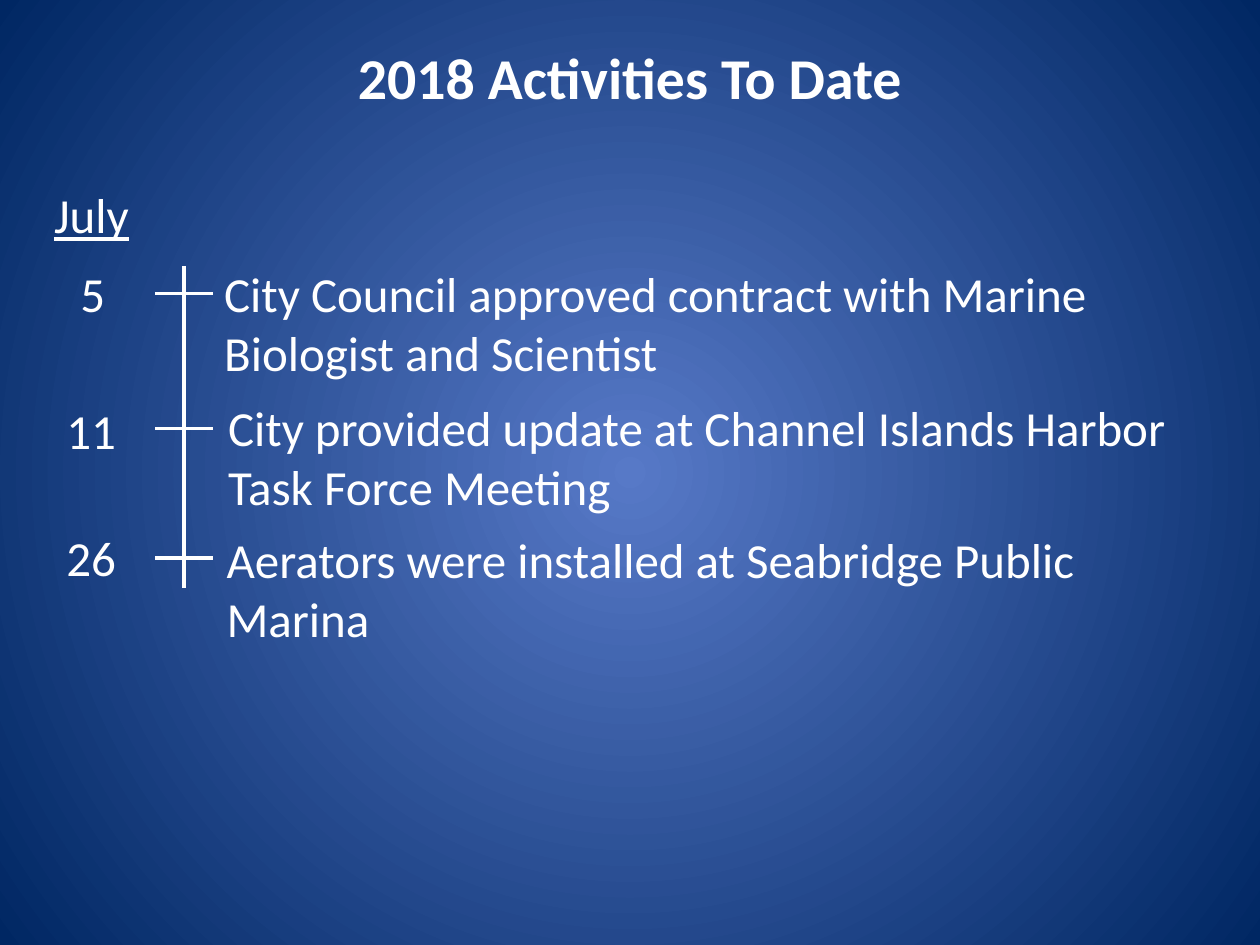
from lxml.etree import SubElement
from pptx import Presentation
from pptx.dml.color import RGBColor
from pptx.enum.shapes import MSO_CONNECTOR
from pptx.enum.text import MSO_ANCHOR, PP_ALIGN
from pptx.oxml import parse_xml
from pptx.oxml.ns import nsdecls, qn
from pptx.util import Cm, Pt


def style(p, size, bold=False, underline=False):
    p.font.name = "Calibri"
    p.font.size = Pt(size)
    p.font.bold = bold
    p.font.underline = underline
    p.font.color.rgb = RGBColor.from_string("FFFFFF")


def add_text(text, x, y, w, h, inset=0.1, underline=False):
    tf = s.shapes.add_textbox(Cm(x), Cm(y), Cm(w), Cm(h)).text_frame
    tf.word_wrap = True
    tf.margin_left = tf.margin_right = tf.margin_top = tf.margin_bottom = Cm(inset)
    p = tf.paragraphs[0]
    p.text = text
    style(p, 28, underline=underline)


prs = Presentation()
prs.slide_width, prs.slide_height = Cm(25.4), Cm(19.05)
s = prs.slides.add_slide(prs.slide_layouts[5])

fill = s.background.fill
fill.gradient()
for stop, color in zip(fill.gradient_stops, ("5779C7", "002763")):
    stop.color.rgb = RGBColor.from_string(color)
fill.gradient_stops[0].position = 0
fill.gradient_stops[1].position = 1
lin = s.element.find(".//" + qn("a:lin"))
lin.getparent().replace(lin, parse_xml(
    f'<a:path {nsdecls("a")} path="circle">'
    '<a:fillToRect l="50000" t="50000" r="50000" b="50000"/></a:path>'))

title = s.shapes.title
title.left, title.top, title.width, title.height = Cm(1.27), Cm(0.71), Cm(22.86), Cm(1.65)
tf = title.text_frame
tf.vertical_anchor = MSO_ANCHOR.MIDDLE
p = tf.paragraphs[0]
p.text = "2018 Activities To Date"
p.alignment = PP_ALIGN.CENTER
style(p, 33, bold=True)

add_text("July", 0.84, 3.48, 2.84, 1.45, inset=0.25, underline=True)

events = [
    ("5", 1.52, 5.21, "City Council approved contract with Marine Biologist and Scientist", 4.42, 5.21, 5.92),
    ("11", 1.24, 7.98, "City provided update at Channel Islands Harbor Task Force Meeting", 4.5, 7.92, 8.64),
    ("26", 1.24, 10.54, "Aerators were installed at Seabridge Public Marina", 4.47, 10.57, 11.25),
]
lines = [(3.71, 5.36, 3.71, 11.86)]
for day, day_x, day_y, text, text_x, text_y, tick_y in events:
    add_text(day, day_x, day_y, 1.27, 1)
    add_text(text, text_x, text_y, 19.9, 2.15)
    lines.append((3.13, tick_y, 4.3, tick_y))

for x1, y1, x2, y2 in lines:
    line = s.shapes.add_connector(MSO_CONNECTOR.STRAIGHT, Cm(x1), Cm(y1), Cm(x2), Cm(y2))
    line.line.width = Pt(2)
    line.line.color.rgb = RGBColor.from_string("FFFFFF")
    SubElement(line.element.spPr, qn("a:effectLst"))

prs.save("out.pptx")
